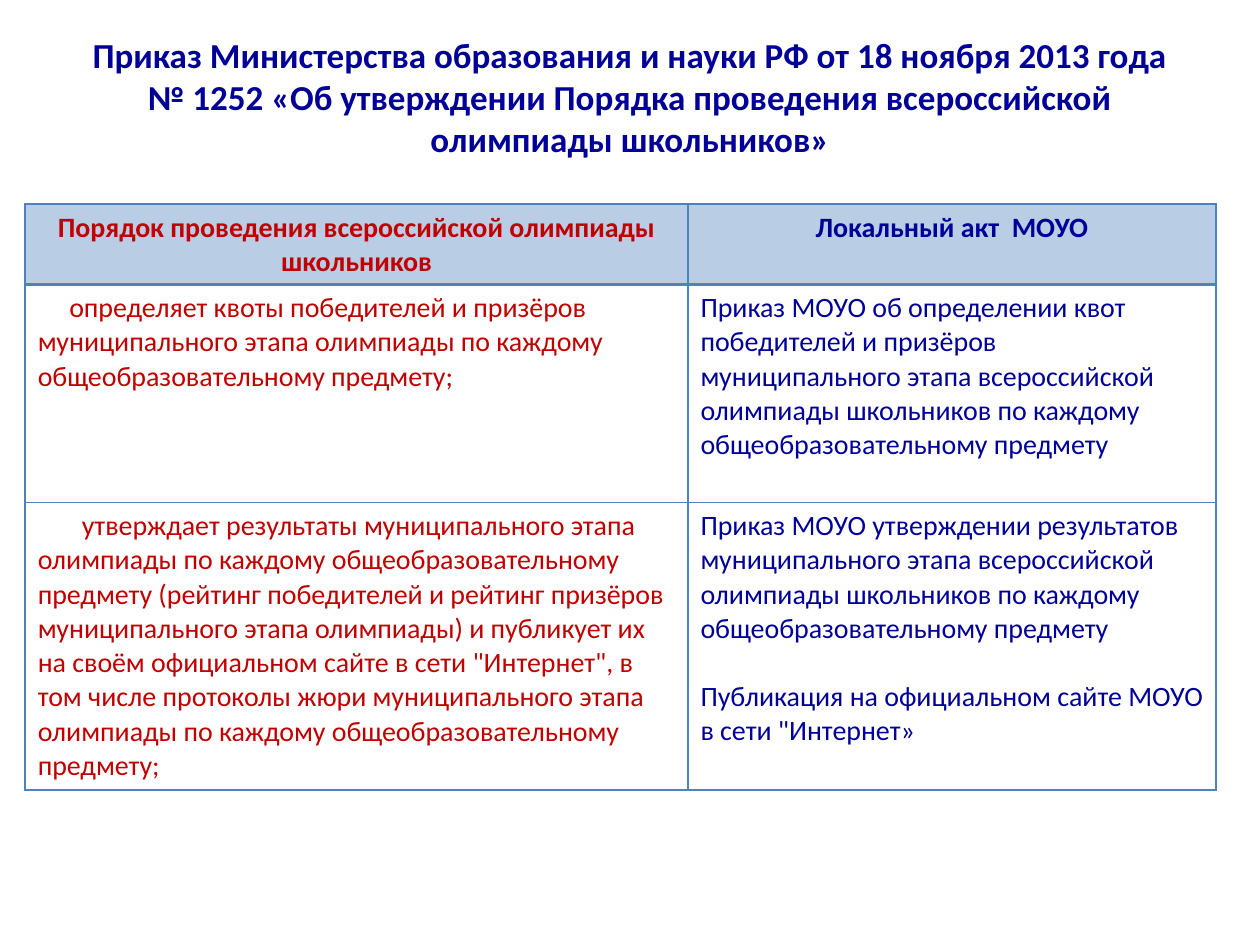
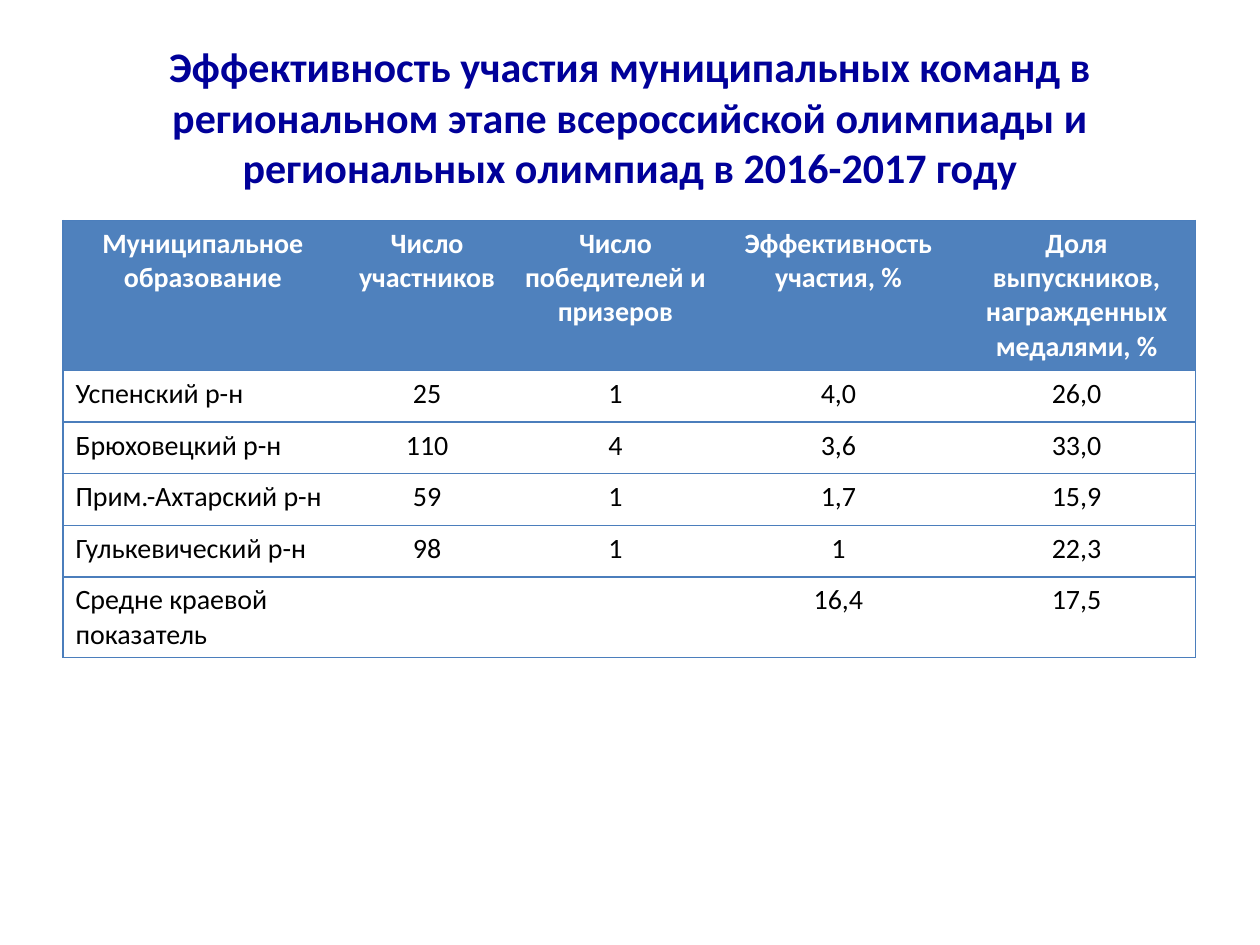
import pptx
import pptx.dml.color
import pptx.enum.text
import pptx.oxml.ns
import pptx.util
from lxml import etree

Inches = pptx.util.Inches
Pt = pptx.util.Pt
RGBColor = pptx.dml.color.RGBColor
CENTER = pptx.enum.text.PP_ALIGN.CENTER
LEFT = pptx.enum.text.PP_ALIGN.LEFT

NAVY = RGBColor(0x00, 0x00, 0x99)
RED = RGBColor(0xC0, 0x00, 0x00)
BLUE = RGBColor(0x4F, 0x81, 0xBD)
LINE_BLUE = RGBColor(0x4B, 0x7E, 0xBC)
PALE_BLUE = RGBColor(0xB9, 0xCD, 0xE5)
WHITE = RGBColor(0xFF, 0xFF, 0xFF)
BLACK = RGBColor(0x00, 0x00, 0x00)

REGULATION_ROWS = [
    ["Порядок проведения всероссийской олимпиады школьников", "Локальный акт  МОУО"],
    [
        "определяет квоты победителей и призёров муниципального этапа олимпиады "
        "по каждому общеобразовательному предмету;",
        "Приказ МОУО об определении квот победителей и призёров муниципального этапа "
        "всероссийской олимпиады школьников по каждому общеобразовательному предмету",
    ],
    [
        "утверждает результаты муниципального этапа олимпиады по каждому "
        "общеобразовательному предмету (рейтинг победителей и рейтинг призёров "
        "муниципального этапа олимпиады) и публикует их на своём официальном сайте "
        'в сети "Интернет", в том числе протоколы жюри муниципального этапа '
        "олимпиады по каждому общеобразовательному предмету;",
        "Приказ МОУО утверждении результатов муниципального этапа всероссийской "
        "олимпиады школьников по каждому общеобразовательному предмету\n"
        'Публикация на официальном сайте МОУО в сети "Интернет»',
    ],
]

EFFICIENCY_ROWS = [
    ["Муниципальное образование", "Число участников", "Число победителей и призеров",
     "Эффективность участия, %", "Доля выпускников, награжденных медалями, %"],
    ["Успенский р-н", "25", "1", "4,0", "26,0"],
    ["Брюховецкий р-н", "110", "4", "3,6", "33,0"],
    ["Прим.-Ахтарский р-н", "59", "1", "1,7", "15,9"],
    ["Гулькевический р-н", "98", "1", "1", "22,3"],
    ["Средне краевой показатель", "", "", "16,4", "17,5"],
]


class Deck:
    """Holds the shared style and the current slide."""

    font = "Calibri"
    table_size = 16

    def __init__(self):
        self.presentation = pptx.Presentation()
        self.presentation.slide_width = Inches(10)
        self.presentation.slide_height = Inches(7.5)
        self.slide = None

    def add_slide(self):
        """Start a new blank slide."""
        self.slide = self.presentation.slides.add_slide(self.presentation.slide_layouts[6])

    def format_text(self, frame, size, color, bold, align):
        """Apply one look to every paragraph of a text frame."""
        for paragraph in frame.paragraphs:
            paragraph.alignment = align
            paragraph.font.size = Pt(size)
            for run in paragraph.runs:
                run.font.name = self.font
                run.font.size = Pt(size)
                run.font.bold = bold
                run.font.color.rgb = color

    def add_title(self, text, height, size):
        """Add the centred slide title."""
        title = self.slide.shapes.add_textbox(Inches(0.5), Inches(0.3), Inches(9), Inches(height))
        frame = title.text_frame
        frame.word_wrap = True
        frame.vertical_anchor = pptx.enum.text.MSO_ANCHOR.MIDDLE
        frame.text = text
        self.format_text(frame, size, NAVY, True, CENTER)

    def add_border(self, cell, side, color, width):
        """Draw one side of a cell, or hide it when the width is zero."""
        line = etree.SubElement(cell._tc.get_or_add_tcPr(), pptx.oxml.ns.qn(f"a:ln{side}"))
        line.set("w", str(int(Pt(width))))
        if width:
            fill = etree.SubElement(line, pptx.oxml.ns.qn("a:solidFill"))
            etree.SubElement(fill, pptx.oxml.ns.qn("a:srgbClr")).set("val", str(color))
        else:
            etree.SubElement(line, pptx.oxml.ns.qn("a:noFill"))

    def add_table(self, rows, left, top, widths, heights, header_fill, header_colors,
                  body_colors, body_aligns, line_color, outer, inner, header_rule):
        """Add a ruled table with a filled header row and return it."""
        table = self.slide.shapes.add_table(
            len(rows), len(widths), Inches(left), Inches(top),
            Inches(sum(widths)), Inches(sum(heights))).table
        table.first_row = table.horz_banding = False
        for column, width in zip(table.columns, widths):
            column.width = Inches(width)
        for row, height in zip(table.rows, heights):
            row.height = Inches(height)
        last = len(widths) - 1
        for r, texts in enumerate(rows):
            for c, text in enumerate(texts):
                cell = table.cell(r, c)
                borders = {
                    "L": inner if c else outer,
                    "R": inner if c < last else outer,
                    "T": header_rule if r == 1 else outer,
                    "B": header_rule if r == 0 else outer,
                }
                for side, width in borders.items():
                    self.add_border(cell, side, line_color, width)
                cell.text_frame.text = text
                if r == 0:
                    cell.fill.solid()
                    cell.fill.fore_color.rgb = header_fill
                    look = header_colors[c], True, CENTER
                else:
                    cell.fill.background()
                    look = body_colors[c], False, body_aligns[c]
                self.format_text(cell.text_frame, self.table_size, *look)
        return table

    def indent_first_line(self, cell, indent):
        """Indent the first line of a cell."""
        properties = cell.text_frame.paragraphs[0]._p.get_or_add_pPr()
        properties.set("marL", "0")
        properties.set("indent", str(int(Inches(indent))))


def main():
    deck = Deck()

    deck.add_slide()
    deck.add_title("Приказ Министерства образования и науки РФ от 18 ноября 2013 года № 1252 "
                   "«Об утверждении Порядка проведения всероссийской олимпиады школьников»",
                   height=0.93, size=20)
    regulation = deck.add_table(
        REGULATION_ROWS, left=0.2, top=1.62, widths=[5.26, 4.19], heights=[0.64, 1.73, 2.28],
        header_fill=PALE_BLUE, header_colors=[RED, NAVY], body_colors=[RED, NAVY],
        body_aligns=[LEFT, LEFT], line_color=BLUE, outer=1, inner=1, header_rule=2)
    for row, indent in ((1, 0.25), (2, 0.35)):
        deck.indent_first_line(regulation.cell(row, 0), indent)
    publication = regulation.cell(2, 1).text_frame.paragraphs[1]
    publication.space_before = Pt(19.5)

    deck.add_slide()
    deck.add_title("Эффективность участия муниципальных команд в региональном этапе "
                   "всероссийской олимпиады и региональных олимпиад в 2016-2017 году",
                   height=1.25, size=24)
    deck.add_table(
        EFFICIENCY_ROWS, left=0.5, top=1.75, widths=[2.22, 1.34, 1.65, 1.89, 1.89],
        heights=[1.19] + [0.41] * 4 + [0.64],
        header_fill=BLUE, header_colors=[WHITE] * 5, body_colors=[BLACK] * 5,
        body_aligns=[LEFT] + [CENTER] * 4, line_color=LINE_BLUE,
        outer=0.75, inner=0, header_rule=0.75)

    deck.presentation.save("out.pptx")


if __name__ == "__main__":
    main()
